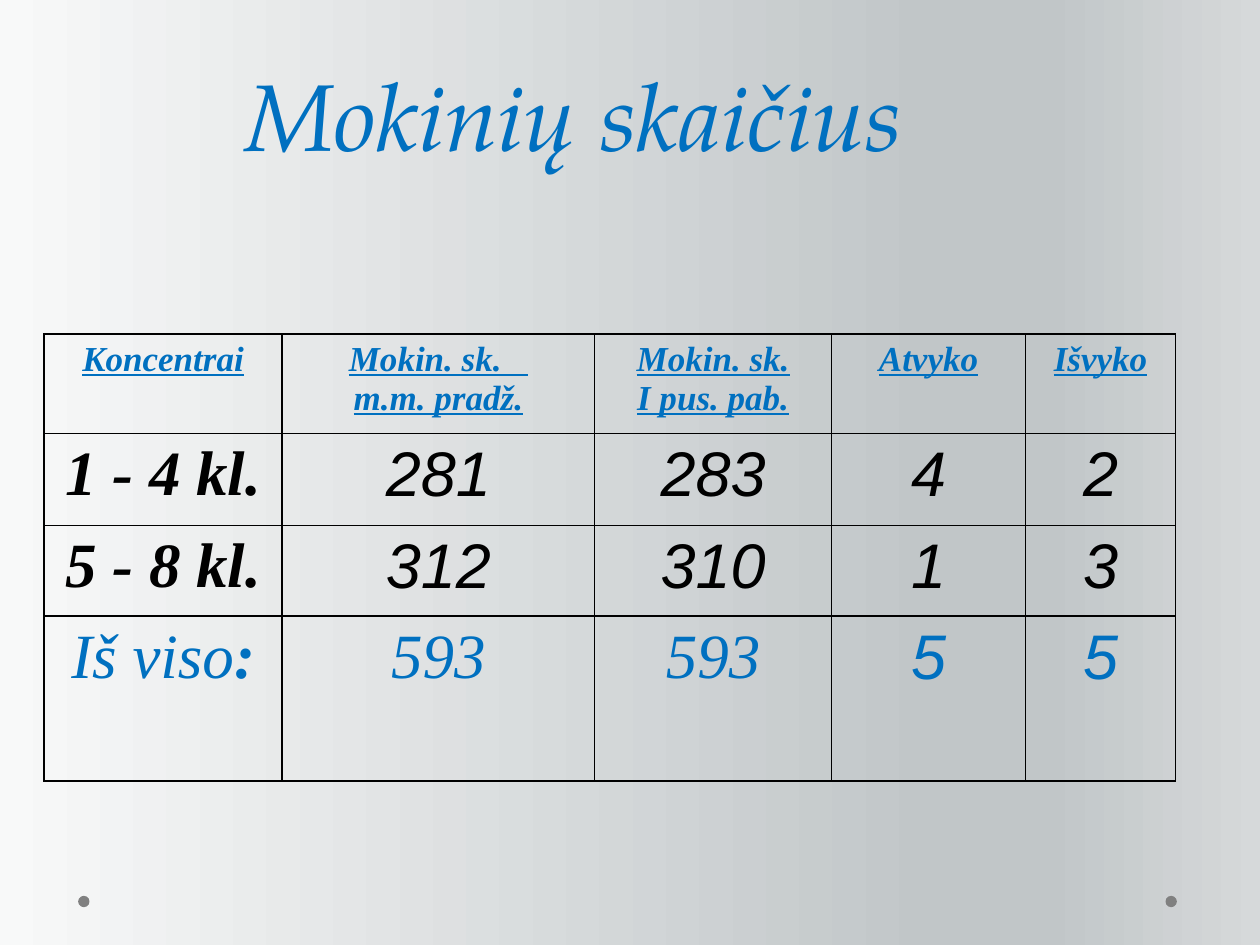
from copy import deepcopy

from lxml import etree
from pptx import Presentation
from pptx.dml.color import RGBColor
from pptx.enum.shapes import MSO_SHAPE as Shape
from pptx.enum.text import MSO_ANCHOR as Anchor, PP_ALIGN as Align
from pptx.oxml.ns import qn
from pptx.util import Inches, Pt

COLORS = {"blue": "0070C0", "black": "000000", "dot": "808080"}
BACKGROUND = [(0, "F8F9F9"), (74, "C1C6C8"), (83, "C1C6C8"), (100, "D6D9DA")]
SERIF, SANS = "Times New Roman", "Arial"

COLUMN_WIDTHS = [1.89, 2.48, 1.88, 1.54, 1.19]
ROW_HEIGHTS = [0.79, 0.73, 0.72, 1.31]
ROWS = [
    # The underlined trailing spaces in the second heading are visible
    ["Koncentrai", "Mokin. sk.   \nm.m. pradž.", "Mokin. sk.\nI pus. pab.",
     "Atvyko", "Išvyko"],
    ["1 - 4 kl.", "281", "283", "4", "2"],
    ["5 - 8 kl.", "312", "310", "1", "3"],
    ["Iš viso", "593", "593", "5", "5"],
]


def rgb(name):
    return RGBColor.from_string(COLORS[name])


def style_font(font, size, face, color, bold=False, underline=False):
    font.size, font.name = Pt(size), face
    font.color.rgb = rgb(color)
    font.italic = True
    font.bold, font.underline = bold, underline


def paint_background(slide):
    fill = slide.background.fill
    fill.gradient()
    fill.gradient_angle = 0
    stop_list = slide.element.find(".//" + qn("a:gsLst"))
    while len(stop_list) < len(BACKGROUND):
        stop_list.append(deepcopy(stop_list[0]))
    for stop, (percent, color) in zip(fill.gradient_stops, BACKGROUND):
        stop.position = percent / 100
        stop.color.rgb = RGBColor.from_string(color)


def place_title(slide, left, top, width, height):
    title = slide.shapes.title
    title.left, title.top = Inches(left), Inches(top)
    title.width, title.height = Inches(width), Inches(height)
    frame = title.text_frame
    frame.text = "Mokinių skaičius"
    frame.vertical_anchor = Anchor.BOTTOM
    heading = frame.paragraphs[0]
    heading.alignment = Align.CENTER
    heading.line_spacing = Pt(58)
    style_font(heading.runs[0].font, 54, "TeX Gyre Pagella", "blue")


def add_borders(cell):
    properties = cell._tc.get_or_add_tcPr()
    for index, side in enumerate(("lnL", "lnR", "lnT", "lnB")):
        line = etree.Element(qn("a:" + side), w=str(Pt(1)))
        solid = etree.SubElement(line, qn("a:solidFill"))
        etree.SubElement(solid, qn("a:srgbClr"), val=COLORS["black"])
        properties.insert(index, line)


def cell_style(row, column):
    """Size, face, colour, bold and underline for a table position."""
    if row == 0:
        return 20, SERIF, "blue", True, True
    if row == len(ROWS) - 1:
        return 36, SERIF if column < 3 else SANS, "blue"
    return (36, SERIF, "black", True) if column == 0 else (36, SANS, "black")


def place_pupil_table(slide, left, top):
    table = slide.shapes.add_table(
        len(ROWS), len(COLUMN_WIDTHS), Inches(left), Inches(top),
        Inches(sum(COLUMN_WIDTHS)), Inches(sum(ROW_HEIGHTS))).table
    table.first_row = table.horz_banding = False
    for column, width in zip(table.columns, COLUMN_WIDTHS):
        column.width = Inches(width)
    for row, height in zip(table.rows, ROW_HEIGHTS):
        row.height = Inches(height)

    for r, texts in enumerate(ROWS):
        for c, text in enumerate(texts):
            cell = table.cell(r, c)
            cell.text_frame.text = text
            cell.fill.background()
            add_borders(cell)
            for paragraph in cell.text_frame.paragraphs:
                paragraph.alignment = Align.CENTER
                style_font(paragraph.runs[0].font, *cell_style(r, c))

    # Bold colon after the total label
    total_label = table.cell(len(ROWS) - 1, 0).text_frame.paragraphs[0]
    colon = total_label.add_run()
    colon.text = ":"
    style_font(colon.font, 36, SERIF, "blue", bold=True)


def place_footer_dots(slide, lefts, top, size):
    for left in lefts:
        dot = slide.shapes.add_shape(
            Shape.OVAL, Inches(left), Inches(top), Inches(size), Inches(size))
        dot.shadow.inherit = False
        dot.fill.solid()
        dot.fill.fore_color.rgb = rgb("dot")
        dot.line.fill.background()


def main():
    deck = Presentation()
    deck.slide_width, deck.slide_height = Inches(10), Inches(7.5)
    slide = deck.slides.add_slide(deck.slide_layouts[5])  # Title Only
    paint_background(slide)
    place_footer_dots(slide, (0.62, 9.25), 7.11, 0.09)
    place_title(slide, 0.43, -0.19, 8.25, 1.59)
    place_pupil_table(slide, 0.35, 2.65)
    deck.save("out.pptx")


if __name__ == "__main__":
    main()
